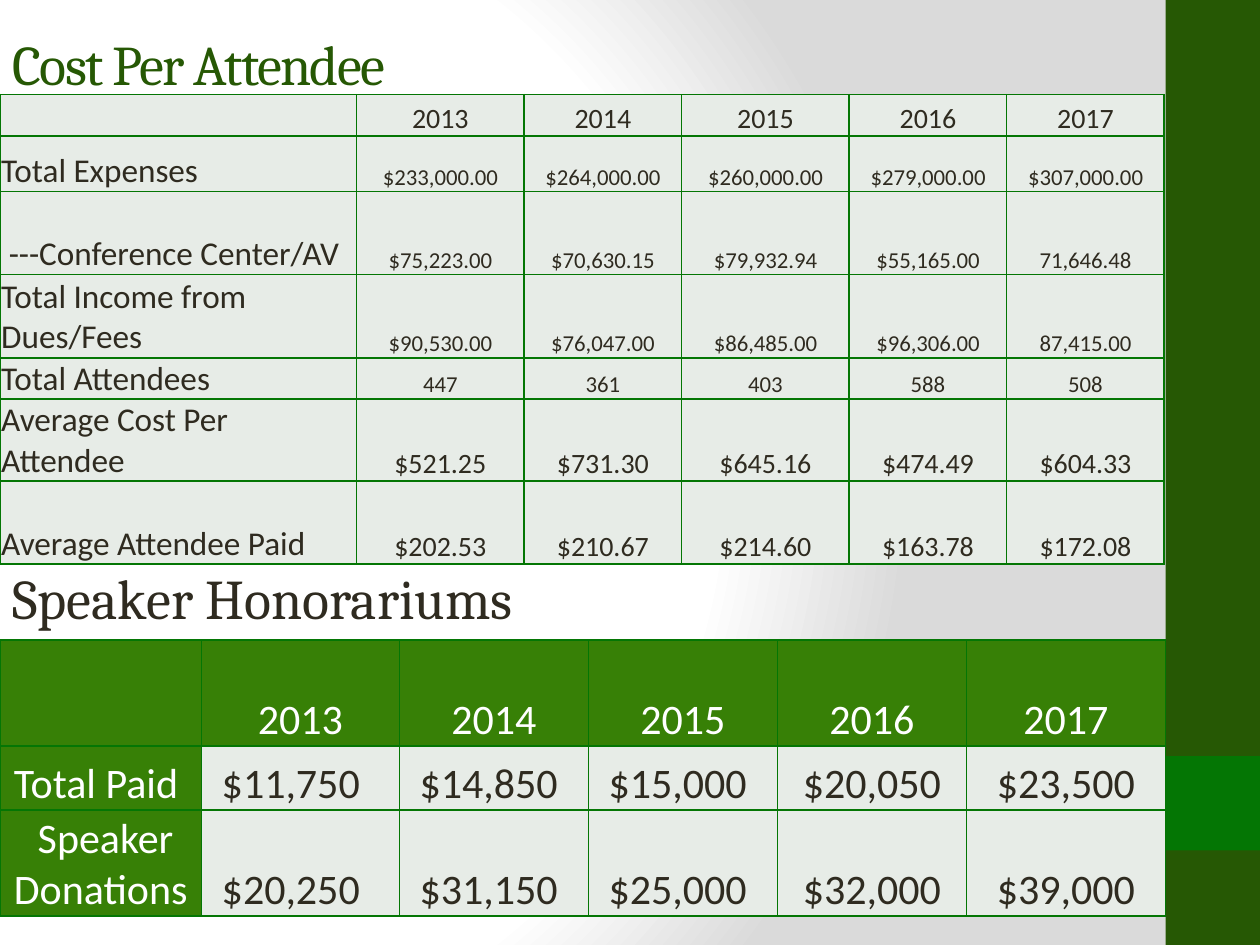
from lxml.etree import SubElement
from pptx import Presentation
from pptx.dml.color import RGBColor
from pptx.enum.shapes import MSO_SHAPE as Shape
from pptx.enum.text import MSO_ANCHOR as Anchor, PP_ALIGN as Align
from pptx.oxml import parse_xml
from pptx.oxml.ns import nsdecls, qn
from pptx.util import Inches, Pt

COLORS = {"band": "265804", "accent": "047604", "header": "378006",
          "cell": "E7ECE7", "ink": "2F2B20", "white": "FFFFFF", "grey": "DADADA"}
YEARS = ["2013", "2014", "2015", "2016", "2017"]
TABLE_WIDTH = 9.25


def style_text(paragraph, font_name, size, color):
    for span in paragraph.runs:
        span.font.name = font_name
        span.font.size = Pt(size)
        span.font.color.rgb = RGBColor.from_string(COLORS[color])


def add_grid(slide, top, columns, heights, rows, style_cell):
    """Add a ruled table; style_cell gives fill, color, size, alignment and indent."""
    frame = slide.shapes.add_table(len(rows), len(columns), 0, Inches(top),
                                   Inches(TABLE_WIDTH), Inches(sum(heights)))
    table = frame.table
    table.first_row = table.horz_banding = False
    for column, width in zip(table.columns, columns):
        column.width = Inches(width)
    for r, (row, height) in enumerate(zip(rows, heights)):
        table.rows[r].height = Inches(height)
        for c, text in enumerate(row):
            fill, color, size, align, indent = style_cell(r, c)
            cell = table.cell(r, c)
            cell.margin_left = Inches(0.01 + indent)
            cell.margin_right = cell.margin_top = Inches(0.01)
            cell.margin_bottom = 0
            cell.vertical_anchor = Anchor.BOTTOM
            cell.fill.solid()
            cell.fill.fore_color.rgb = RGBColor.from_string(COLORS[fill])
            para = cell.text_frame.paragraphs[0]
            para.alignment = align
            if text:
                para.text = text
                style_text(para, "Calibri", size, color)
            properties = cell._tc.get_or_add_tcPr()
            for position, side in enumerate(("lnL", "lnR", "lnT", "lnB")):
                line = parse_xml(
                    f'<a:{side} {nsdecls("a")} w="12700"><a:solidFill>'
                    f'<a:srgbClr val="{COLORS["accent"]}"/></a:solidFill></a:{side}>')
                properties.insert(position, line)


deck = Presentation()
deck.slide_width, deck.slide_height = Inches(10), Inches(7.5)
page = deck.slides.add_slide(deck.slide_layouts[5])

# Background: white glow from the left fading to grey
page.background.fill.gradient()
gradient = page.background._cSld.find(".//" + qn("a:gradFill"))
for child in list(gradient):
    gradient.remove(child)
stops = SubElement(gradient, qn("a:gsLst"))
for percent, name in ((0, "white"), (75, "white"), (100, "grey")):
    stop = SubElement(stops, qn("a:gs"), pos=str(percent * 1000))
    SubElement(stop, qn("a:srgbClr"), val=COLORS[name])
glow = SubElement(gradient, qn("a:path"))
glow.set("path", "circle")
SubElement(glow, qn("a:fillToRect"), l="20000", t="50000", r="100000", b="50000")

# Side band
for top, height, name in ((0, 7.5, "band"), (6, 0.75, "accent")):
    band = page.shapes.add_shape(Shape.RECTANGLE, Inches(TABLE_WIDTH), Inches(top),
                                 Inches(10 - TABLE_WIDTH), Inches(height))
    band.shadow.inherit = False
    band.fill.solid()
    band.fill.fore_color.rgb = RGBColor.from_string(COLORS[name])
    band.line.fill.background()

# Headings
title = page.shapes.title
title.left, title.top, title.width, title.height = 0, 0, Inches(8.33), Inches(1)
subtitle = page.shapes.add_textbox(0, Inches(4.42), Inches(6.17), Inches(0.64))
for box, text, color, anchor in (
        (title, "Cost Per Attendee", "band", Anchor.MIDDLE),
        (subtitle, "Speaker Honorariums", "ink", Anchor.TOP)):
    box.text_frame.text = text
    box.text_frame.word_wrap = True
    box.text_frame.vertical_anchor = anchor
    para = box.text_frame.paragraphs[0]
    para.alignment = Align.LEFT
    style_text(para, "Cambria", 32, color)
title.text_frame.paragraphs[0].runs[0].font._element.set("spc", "-100")

# Cost per attendee
cost_rows = [
    ["", *YEARS],
    ["Total Expenses", "$233,000.00", "$264,000.00", "$260,000.00", "$279,000.00", "$307,000.00"],
    ["---Conference Center/AV", "$75,223.00", "$70,630.15", "$79,932.94", "$55,165.00", "71,646.48"],
    ["Total Income from Dues/Fees", "$90,530.00", "$76,047.00", "$86,485.00", "$96,306.00", "87,415.00"],
    ["Total Attendees", "447", "361", "403", "588", "508"],
    ["Average Cost Per Attendee", "$521.25", "$731.30", "$645.16", "$474.49", "$604.33"],
    ["Average Attendee Paid", "$202.53", "$210.67", "$214.60", "$163.78", "$172.08"],
]


def cost_style(r, c):
    if c == 0:
        return "cell", "ink", 19, Align.LEFT, 0.06 if r == 2 else 0
    return "cell", "ink", 13 if 1 <= r <= 4 else 16, Align.CENTER, 0


add_grid(page, 0.75, [2.83, 1.33, 1.25, 1.33, 1.25, 1.25],
         [0.33, 0.44, 0.66, 0.66, 0.32, 0.65, 0.66], cost_rows, cost_style)

# Speaker honorariums
speaker_rows = [
    ["", *YEARS],
    ["Total Paid ", "$11,750", "$14,850", "$15,000", "$20,050", "$23,500"],
    [" Speaker Donations", "$20,250", "$31,150", "$25,000", "$32,000", "$39,000"],
]


def speaker_style(r, c):
    if r == 0 or c == 0:
        return "header", "white", 24, Align.CENTER, 0
    if c <= 3:
        return "cell", "ink", 24, Align.LEFT, 0.15
    return "cell", "ink", 24, Align.CENTER, 0


add_grid(page, 5.08, [1.6, 1.57, 1.5, 1.5, 1.5, 1.58],
         [0.84, 0.51, 0.84], speaker_rows, speaker_style)

deck.save("out.pptx")
